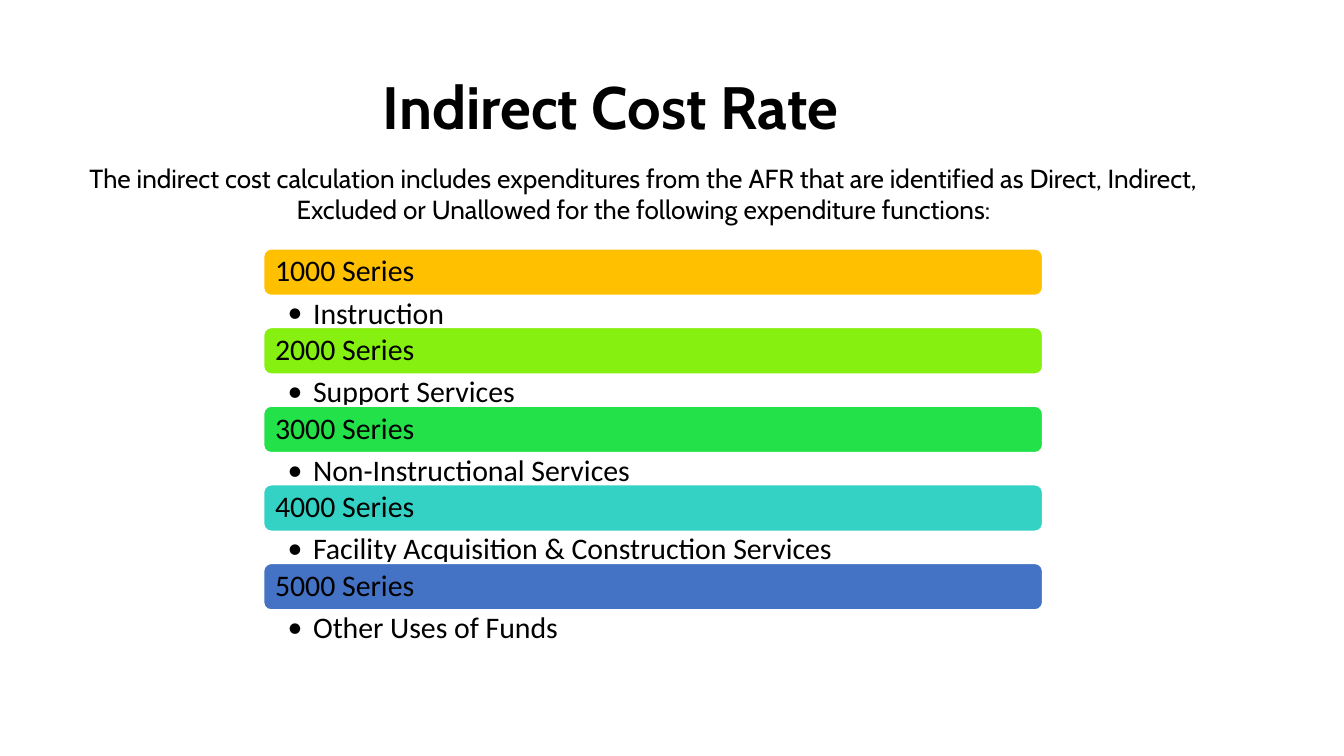
from pptx import Presentation
from pptx.dml.color import RGBColor
from pptx.enum.shapes import MSO_SHAPE as Shape
from pptx.enum.text import MSO_ANCHOR as Anchor, MSO_AUTO_SIZE as AutoSize, PP_ALIGN as Align
from pptx.oxml.ns import qn
from pptx.util import Inches, Pt
from lxml.etree import SubElement

BLACK = RGBColor(0x00, 0x00, 0x00)
WHITE = RGBColor(0xFF, 0xFF, 0xFF)
AMBER = RGBColor(0xFF, 0xC0, 0x00)
LIME = RGBColor(0x86, 0xF0, 0x11)
GREEN = RGBColor(0x23, 0xE1, 0x48)
TURQUOISE = RGBColor(0x33, 0xD2, 0xC5)
BLUE = RGBColor(0x44, 0x72, 0xC4)

SERIES = [
    ("1000 Series", "Instruction", AMBER),
    ("2000 Series", "Support Services", LIME),
    ("3000 Series", "Non-Instructional Services", GREEN),
    ("4000 Series", "Facility Acquisition & Construction Services", TURQUOISE),
    ("5000 Series", "Other Uses of Funds", BLUE),
]
SLIDE_WIDTH = 10
SLIDE_HEIGHT = SLIDE_WIDTH * 9 / 16
LEFT, WIDTH = 1.96, 5.8
FIRST_TOP, LAST_TOP = 1.85, 4.19
BAR_HEIGHT, FUNCTION_HEIGHT = 0.35, 0.24


class SlideBuilder:
    """Draws the slide elements in one shared style."""

    heading_font = "Cabin"
    list_font = "Calibri"
    list_size = 16

    def __init__(self, slide):
        self.shapes = slide.shapes

    def style(self, paragraph, font, size, bold=False):
        for run in paragraph.runs:
            run.font.name = font
            run.font.size = Pt(size)
            run.font.bold = bold
            run.font.color.rgb = BLACK

    def margins(self, frame, left, top, right, bottom):
        frame.margin_left, frame.margin_top = Inches(left), Inches(top)
        frame.margin_right, frame.margin_bottom = Inches(right), Inches(bottom)

    def heading(self, text, box, size, bold=False, wrap=True, align=Align.LEFT):
        frame = self.shapes.add_textbox(*map(Inches, box)).text_frame
        frame.text = text
        frame.word_wrap = wrap
        frame.auto_size = AutoSize.SHAPE_TO_FIT_TEXT
        frame.paragraphs[0].alignment = align
        self.style(frame.paragraphs[0], self.heading_font, size, bold)

    def series_bar(self, text, top, color):
        box = map(Inches, (LEFT, top, WIDTH, BAR_HEIGHT))
        bar = self.shapes.add_shape(Shape.ROUNDED_RECTANGLE, *box)
        bar.shadow.inherit = False
        bar.fill.solid()
        bar.fill.fore_color.rgb = color
        bar.line.color.rgb = WHITE
        bar.line.width = Pt(1)
        frame = bar.text_frame
        frame.text = text
        frame.vertical_anchor = Anchor.MIDDLE
        self.margins(frame, 0.07, 0, 0.07, 0)
        label = frame.paragraphs[0]
        label.alignment = Align.LEFT
        label.line_spacing = 0.9
        self.style(label, self.list_font, self.list_size)

    def function_bullet(self, text, top):
        box = map(Inches, (LEFT, top, WIDTH, FUNCTION_HEIGHT))
        frame = self.shapes.add_textbox(*box).text_frame
        frame.text = text
        frame.word_wrap = True
        self.margins(frame, 0.18, 0.02, 0.12, 0.02)
        item = frame.paragraphs[0]
        item.level = 1
        item.line_spacing = 0.9
        properties = item._p.get_or_add_pPr()
        properties.set("marL", str(Inches(0.19)))
        properties.set("indent", str(-Inches(0.19)))
        bullet_color = SubElement(properties, qn("a:buClr"))
        SubElement(bullet_color, qn("a:srgbClr"), val=str(BLACK))
        SubElement(properties, qn("a:buFont"), typeface=self.list_font)
        SubElement(properties, qn("a:buChar"), char="•")
        self.style(item, self.list_font, self.list_size)


def main():
    deck = Presentation()
    deck.slide_width, deck.slide_height = Inches(SLIDE_WIDTH), Inches(SLIDE_HEIGHT)
    builder = SlideBuilder(deck.slides.add_slide(deck.slide_layouts[6]))

    builder.heading("Indirect Cost Rate", (2.75, 0.47, 4.08, 0.64), 32, bold=True, wrap=False)
    builder.heading(
        "The indirect cost calculation includes expenditures from the AFR that are identified as "
        "Direct, Indirect, Excluded or Unallowed for the following expenditure functions:",
        (0.44, 1.16, 8.7, 0.57), 14, align=Align.CENTER)

    pitch = (LAST_TOP - FIRST_TOP) / (len(SERIES) - 1)
    for index, (series, function, color) in enumerate(SERIES):
        top = FIRST_TOP + index * pitch
        builder.series_bar(series, top, color)
        builder.function_bullet(function, top + BAR_HEIGHT)

    deck.save("out.pptx")


if __name__ == "__main__":
    main()
